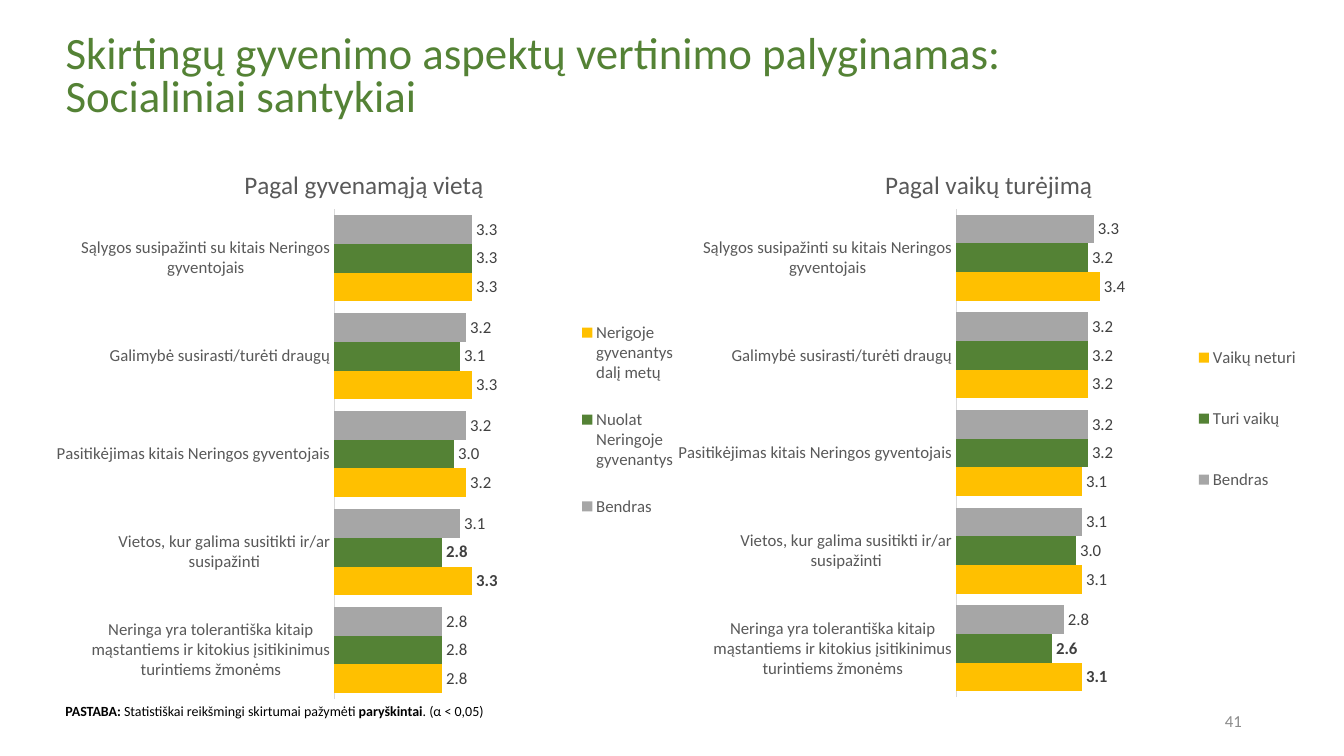
from lxml import etree
from pptx import Presentation, util as u
from pptx.chart import data as cd
from pptx.dml import color
from pptx.enum import chart as ch, text as tx
from pptx.oxml import ns

FONT = "Calibri"
GREEN, GREY, GOLD = "548235", "A6A6A6", "FFC000"
TEXT, DARK, RULE, PALE, BLACK = "595959", "404040", "D9D9D9", "8C8C8C", "000000"
NUM = "#,##0.0"

ASPECTS = [
    "Sąlygos susipažinti su kitais Neringos gyventojais",
    "Galimybė susirasti/turėti draugų",
    "Pasitikėjimas kitais Neringos gyventojais",
    "Vietos, kur galima susitikti ir/ar susipažinti",
    "Neringa yra tolerantiška kitaip mąstantiems ir kitokius "
    "įsitikinimus turintiems žmonėms",
]
TOTAL = ("Bendras", [3.3, 3.2, 3.2, 3.1, 2.8], GREY)
HOME = [
    TOTAL,
    ("Nuolat Neringoje gyvenantys", [3.3, 3.1, 3.0, 2.8, 2.8], GREEN),
    ("Nerigoje gyvenantys dalį metų", [3.3, 3.3, 3.2, 3.3, 2.8], GOLD),
]
KIDS = [
    TOTAL,
    ("Turi vaikų", [3.2, 3.2, 3.2, 3.0, 2.6], GREEN),
    ("Vaikų neturi", [3.4, 3.2, 3.1, 3.1, 3.1], GOLD),
]


def rgb(code):
    return color.RGBColor.from_string(code)


def put(item, **vals):
    for key, val in vals.items():
        setattr(item, key, val)


class Deck:
    def __init__(self, wide, high):
        self.prs = Presentation()
        put(self.prs, slide_width=u.Pt(wide), slide_height=u.Pt(high))
        self.slide = self.prs.slides.add_slide(self.prs.slide_layouts[5])

    def style(self, font, size, code, bold=False):
        put(font, name=FONT, size=u.Pt(size), bold=bold)
        font.color.rgb = rgb(code)

    def place(self, item, box):
        for key, val in zip(("left", "top", "width", "height"), box):
            setattr(item, key, u.Pt(val))

    def words(self, frame, runs, size, code, anchor, **form):
        put(frame, word_wrap=True, vertical_anchor=anchor,
            auto_size=tx.MSO_AUTO_SIZE.NONE)
        para = frame.paragraphs[0]
        put(para, **form)
        for part, bold in runs:
            run = para.add_run()
            run.text = part
            self.style(run.font, size, code, bold)

    def title(self, name, box):
        head = self.slide.shapes.title
        self.place(head, box)
        self.words(head.text_frame, [(name, False)], 32, GREEN,
                   tx.MSO_ANCHOR.MIDDLE, alignment=tx.PP_ALIGN.LEFT,
                   line_spacing=0.8)

    def text(self, runs, box, size, code, anchor, align):
        area = self.slide.shapes.add_textbox(*map(u.Pt, box))
        self.words(area.text_frame, runs, size, code, anchor, alignment=align)

    def layout(self, node, inner=False, **spots):
        """Fix a chart part at fractions of the chart area."""
        for old in node.findall(ns.qn("c:layout")):
            node.remove(old)
        lay = etree.Element(ns.qn("c:layout"))
        man = etree.SubElement(lay, ns.qn("c:manualLayout"))
        rows = [("layoutTarget", "inner")] if inner else []
        rows += [("xMode", "edge"), ("yMode", "edge"), *spots.items()]
        for tag, val in rows:
            etree.SubElement(man, ns.qn("c:" + tag)).set("val", str(val))
        prior = [node.find(ns.qn("c:" + tag)) for tag in ("tx", "legendPos")]
        prior = [part for part in prior if part is not None]
        if prior:
            prior[0].addnext(lay)
        else:
            node.insert(0, lay)

    def bars(self, name, rows, box, bold, left, key):
        data = cd.CategoryChartData(number_format=NUM)
        data.categories = ASPECTS
        for label, vals, _ in rows:
            data.add_series(label, vals)
        chart = self.slide.shapes.add_chart(
            ch.XL_CHART_TYPE.BAR_CLUSTERED, *map(u.Pt, box), data).chart
        self.style(chart.font, 10, BLACK)

        # Heading and legend
        put(chart, has_title=True, has_legend=True)
        para = chart.chart_title.text_frame.paragraphs[0]
        run = para.add_run()
        run.text = name
        self.style(run.font, 18, TEXT)
        self.layout(chart.chart_title._element, x=left, y=0.04)
        put(chart.legend, position=ch.XL_LEGEND_POSITION.RIGHT,
            include_in_layout=False)
        self.style(chart.legend.font, 12, TEXT)
        self.layout(chart.legend._element, **key)

        # Axes
        cat, val = chart.category_axis, chart.value_axis
        none = ch.XL_TICK_MARK.NONE
        put(cat, reverse_order=True, major_tick_mark=none,
            minor_tick_mark=none, has_major_gridlines=False)
        self.style(cat.tick_labels.font, 12, TEXT)
        cat.format.line.color.rgb = rgb(RULE)
        cat.format.line.width = u.Pt(0.75)
        put(val, visible=False, minimum_scale=1, maximum_scale=5,
            has_major_gridlines=False)
        put(val.tick_labels, number_format=NUM, number_format_is_linked=False)

        # Bars and their labels
        plot = chart.plots[0]
        put(plot, gap_width=40, overlap=0, vary_by_categories=False)
        self.layout(chart._chartSpace.chart.plotArea, inner=True,
                    x=0.45, y=0.12, w=0.38, h=0.85)
        out = ch.XL_LABEL_POSITION.OUTSIDE_END
        for series, (_, _, code) in zip(plot.series, rows):
            series.format.fill.solid()
            series.format.fill.fore_color.rgb = rgb(code)
            series.invert_if_negative = False
            put(series.data_labels, show_value=True, position=out,
                number_format=NUM, number_format_is_linked=False)
            self.style(series.data_labels.font, 12, DARK)
            if code != GREY:
                mark = series.points[bold].data_label
                self.style(mark.font, 12, DARK, True)
                mark.position = out


def main():
    deck = Deck(960, 540)
    deck.title("Skirtingų gyvenimo aspektų vertinimo palyginamas: "
               "Socialiniai santykiai", (39.6, 18.7, 733.7, 74.2))

    # Charts
    deck.bars("Pagal gyvenamąją vietą", HOME, (36, 100, 450.7, 411.8), 3, 0.3,
              dict(x=0.83, y=0.27, w=0.17, h=0.43))
    deck.bars("Pagal vaikų turėjimą", KIDS, (480.2, 100, 450.7, 410.4), 4, 0.33,
              dict(x=0.83, y=0.29, w=0.17, h=0.39))

    # Note and page number
    deck.text([("PASTABA:", True),
               (" Statistiškai reikšmingi skirtumai pažymėti ", False),
               ("paryškintai", True), (". (α < 0,05)", False)],
              (39.6, 498.2, 809.3, 19.4), 10, BLACK,
              tx.MSO_ANCHOR.TOP, tx.PP_ALIGN.JUSTIFY)
    deck.text([("41", False)], (678.2, 500.4, 216, 28.8), 12, PALE,
              tx.MSO_ANCHOR.MIDDLE, tx.PP_ALIGN.RIGHT)
    deck.prs.save("out.pptx")


if __name__ == "__main__":
    main()
